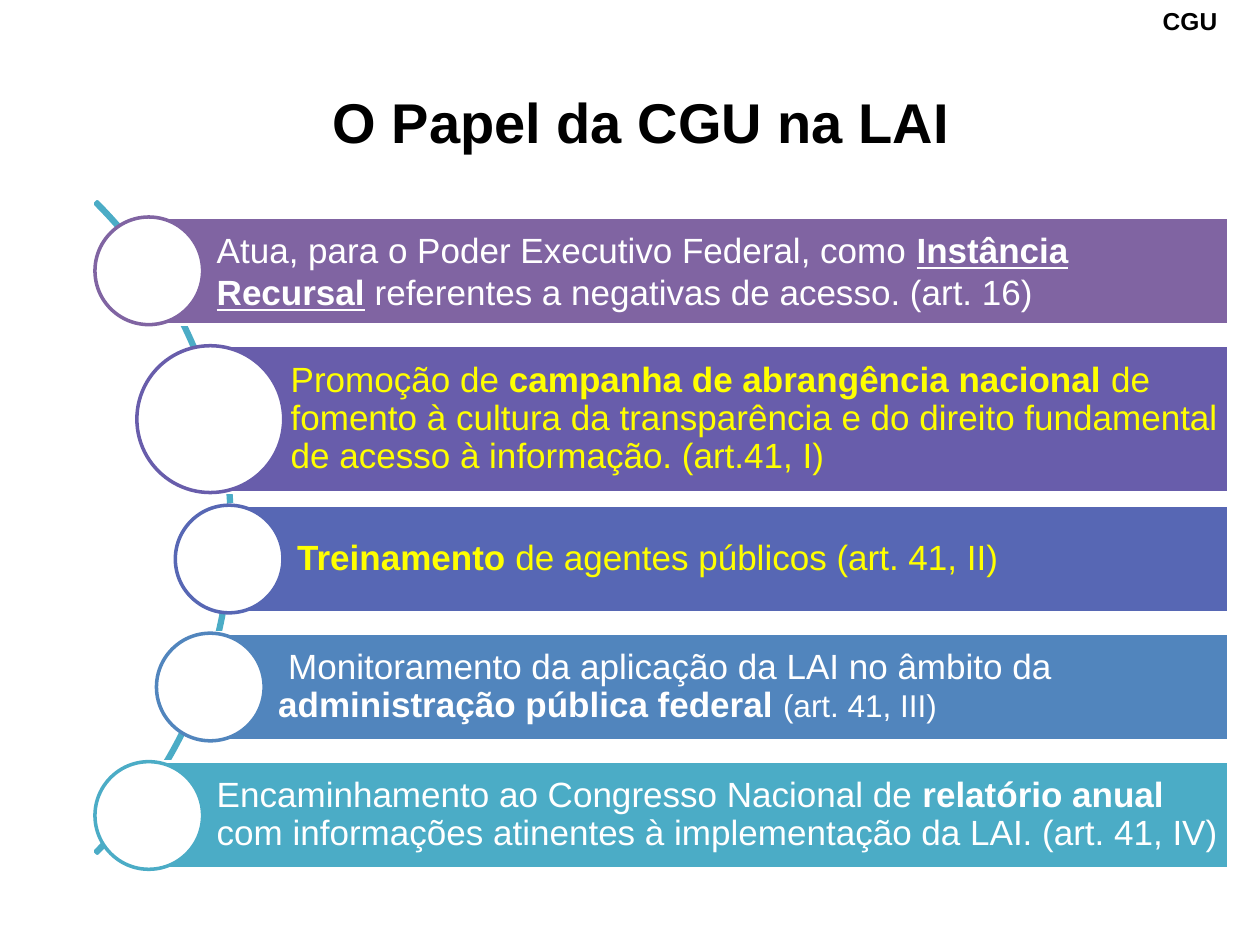
from dataclasses import dataclass

from pptx import Presentation
from pptx.dml.color import RGBColor
from pptx.enum.shapes import MSO_SHAPE
from pptx.enum.text import MSO_ANCHOR, MSO_AUTO_SIZE, PP_ALIGN
from pptx.util import Cm, Pt

RECTANGLE, OVAL, BLOCK_ARC = MSO_SHAPE.RECTANGLE, MSO_SHAPE.OVAL, MSO_SHAPE.BLOCK_ARC
MIDDLE = MSO_ANCHOR.MIDDLE
LEFT, CENTER = PP_ALIGN.LEFT, PP_ALIGN.CENTER
NO_AUTOFIT = MSO_AUTO_SIZE.NONE
TITLE_ONLY = 5


@dataclass(frozen=True)
class Theme:
    font: str = "Arial"
    black: str = "000000"
    white: str = "FFFFFF"
    yellow: str = "FFFF00"
    purple: str = "8064A2"
    violet: str = "685DAB"
    indigo: str = "5767B4"
    blue: str = "5185BD"
    teal: str = "4BACC6"
    title_size: int = 32
    duty_size: int = 20
    citation_size: int = 18
    agency_size: int = 14
    line_width: int = 2


@dataclass(frozen=True)
class Duty:
    center_x: float
    center_y: float
    height: float
    fill: str
    color: str
    runs: tuple
    spacing: float = 0.9
    margin: float = 0
    indent: float = 0


class SlideBuilder:
    def __init__(self, slide, theme):
        self.slide = slide
        self.theme = theme

    def style(self, paragraph, size, color, bold=None):
        font = paragraph.font
        font.name = self.theme.font
        font.size = Pt(size)
        font.bold = bold
        font.color.rgb = RGBColor.from_string(color)

    def shape(self, kind, left, top, width, height, fill, line):
        shape = self.slide.shapes.add_shape(
            kind, Cm(left), Cm(top), Cm(width), Cm(height)
        )
        shape.shadow.inherit = False
        if fill:
            shape.fill.solid()
            shape.fill.fore_color.rgb = RGBColor.from_string(fill)
        else:
            shape.fill.background()
        shape.line.color.rgb = RGBColor.from_string(line)
        shape.line.width = Pt(self.theme.line_width)
        return shape

    def title(self, text, left, top, width, height):
        title = self.slide.shapes.title
        title.left, title.top = Cm(left), Cm(top)
        title.width, title.height = Cm(width), Cm(height)
        frame = title.text_frame
        frame.text = text
        frame.word_wrap = False
        frame.auto_size = NO_AUTOFIT
        frame.vertical_anchor = MIDDLE
        paragraph = frame.paragraphs[0]
        paragraph.alignment = CENTER
        paragraph.line_spacing = 1.5
        self.style(paragraph, self.theme.title_size, self.theme.black, True)

    def label(self, text, left, top, width, height):
        box = self.slide.shapes.add_textbox(Cm(left), Cm(top), Cm(width), Cm(height))
        box.text_frame.word_wrap = True
        paragraph = box.text_frame.paragraphs[0]
        paragraph.text = text
        self.style(paragraph, self.theme.agency_size, self.theme.black, True)

    def arc(self, left, top, diameter):
        arc = self.shape(
            BLOCK_ARC, left, top, diameter, diameter, None, self.theme.teal
        )
        for index, value in enumerate((189, 27, 0.003)):
            arc.adjustments[index] = value

    def bar(self, duty, right):
        bar = self.shape(
            RECTANGLE, duty.center_x, duty.center_y - duty.height / 2,
            right - duty.center_x, duty.height, duty.fill, self.theme.white,
        )
        frame = bar.text_frame
        frame.word_wrap = True
        frame.vertical_anchor = MIDDLE
        frame.margin_left = Cm(1.37)
        frame.margin_top = frame.margin_right = frame.margin_bottom = Cm(0.15)
        paragraph = frame.paragraphs[0]
        paragraph.alignment = LEFT
        paragraph.line_spacing = duty.spacing
        properties = paragraph._p.get_or_add_pPr()
        properties.set("marL", str(Cm(duty.margin)))
        properties.set("indent", str(Cm(duty.indent)))
        self.style(paragraph, self.theme.duty_size, duty.color)
        for text, emphasis in duty.runs:
            run = paragraph.add_run()
            run.text = text
            if "bold" in emphasis:
                run.font.bold = True
            if "underline" in emphasis:
                run.font.underline = True
            if "small" in emphasis:
                run.font.size = Pt(self.theme.citation_size)

    def circle(self, duty):
        radius = duty.height / 2
        self.shape(
            OVAL, duty.center_x - radius, duty.center_y - radius,
            duty.height, duty.height, self.theme.white, duty.fill,
        )


def main():
    theme = Theme()
    deck = Presentation()
    deck.slide_width, deck.slide_height = Cm(25.4), Cm(19.05)
    builder = SlideBuilder(deck.slides.add_slide(deck.slide_layouts[TITLE_ONLY]), theme)

    duties = (
        Duty(3, 5.46, 2.17, theme.purple, theme.white, (
            ("Atua, para o Poder Executivo Federal, como ", ()),
            ("Instância Recursal", ("bold", "underline")),
            (" referentes a negativas de acesso. (art. 16)", ()),
        ), spacing=1),
        Duty(4.24, 8.45, 2.96, theme.violet, theme.yellow, (
            ("Promoção de ", ()),
            ("campanha de abrangência nacional ", ("bold",)),
            ("de fomento à cultura da transparência e do direito fundamental "
             "de acesso à informação. (art.41, I)", ()),
        ), margin=0.25),
        Duty(4.62, 11.27, 2.17, theme.indigo, theme.yellow, (
            ("Treinamento", ("bold",)),
            (" de agentes públicos (art. 41, II)", ()),
        )),
        Duty(4.24, 13.85, 2.17, theme.blue, theme.white, (
            ("Monitoramento da aplicação da LAI no âmbito da ", ()),
            ("administração pública federal ", ("bold",)),
            ("(art. 41, III)", ("small",)),
        ), indent=0.2),
        Duty(3, 16.44, 2.17, theme.teal, theme.white, (
            ("Encaminhamento ao Congresso Nacional de ", ()),
            ("relatório anual ", ("bold",)),
            ("com informações atinentes à implementação da LAI. (art. 41, IV)", ()),
        )),
    )

    builder.label("CGU", 23.19, 0, 2.21, 0.86)
    builder.title("O Papel da CGU na LAI", 2.13, 0.91, 21.59, 2.39)
    builder.arc(-13.89, 1.35, 18.57)
    for duty in duties:
        builder.bar(duty, right=24.77)
        builder.circle(duty)

    deck.save("out.pptx")


if __name__ == "__main__":
    main()
